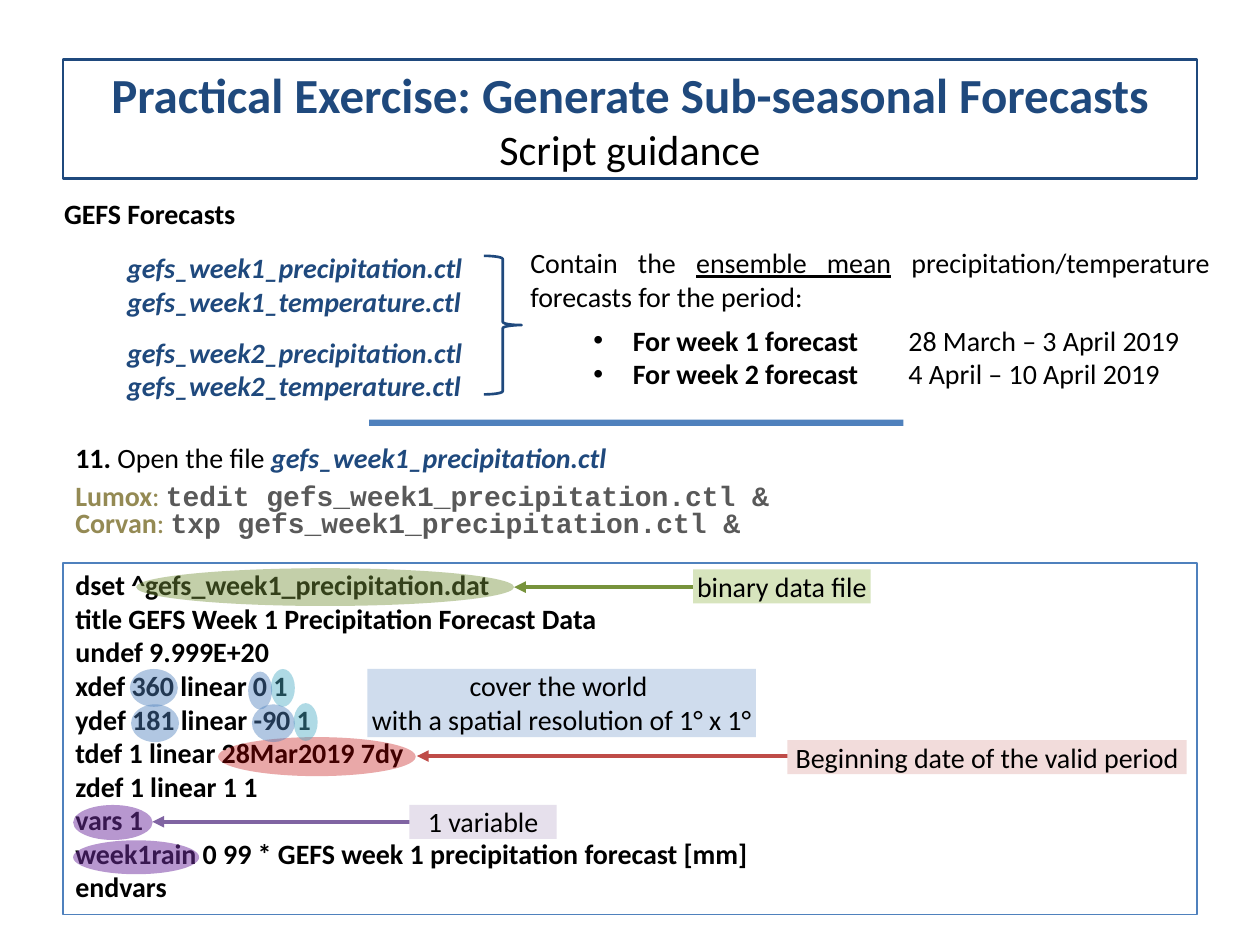
"""Build the slide that walks through a GEFS precipitation control file."""
from dataclasses import dataclass

from lxml import etree
from pptx import Presentation
from pptx import util as u
from pptx.dml.color import RGBColor
from pptx.enum import shapes, text
from pptx.oxml.ns import qn

SHAPE = shapes.MSO_SHAPE
ALIGN = text.PP_ALIGN


@dataclass(frozen=True)
class Theme:
    font: str = "Calibri"
    mono: str = "Courier New"
    title: float = 28
    subtitle: float = 24
    body: float = 16
    black: str = "000000"
    navy: str = "1F497D"
    blue: str = "4F81BD"
    aqua: str = "4BACC6"
    olive: str = "948A54"
    grey: str = "595959"
    green: str = "77933C"
    pale_green: str = "D7E4BD"
    red: str = "C00000"
    brick: str = "BF4C48"
    pale_red: str = "F2DCDB"
    purple: str = "7030A0"
    violet: str = "8064A2"
    pale_violet: str = "E6E0EC"


class SlideBuilder:
    def __init__(self, page, theme):
        self.page = page
        self.theme = theme

    def shape(self, kind, at, fill=None, alpha=None, line=None, width=0.75):
        shape = self.page.shapes.add_shape(kind, *map(u.Pt, at))
        shape.shadow.inherit = False
        if fill:
            shape.fill.solid()
            shape.fill.fore_color.rgb = RGBColor.from_string(fill)
            if alpha:
                color = shape.fill._xPr.find(f"{qn('a:solidFill')}/{qn('a:srgbClr')}")
                etree.SubElement(color, qn("a:alpha"), val=str(alpha * 1000))
        else:
            shape.fill.background()
        if line:
            shape.line.color.rgb = RGBColor.from_string(line)
            shape.line.width = u.Pt(width)
        else:
            shape.line.fill.background()
        return shape

    def ellipse(self, at, fill, alpha):
        self.shape(SHAPE.OVAL, at, fill, alpha)

    def text_box(self, at):
        box = self.page.shapes.add_textbox(*map(u.Pt, at))
        box.text_frame.word_wrap = True
        return box

    def span(self, para, words, size=None, color=None, font=None, **style):
        span = para.add_run()
        span.text = words
        span.font.name = font or self.theme.font
        span.font.size = u.Pt(size or self.theme.body)
        span.font.color.rgb = RGBColor.from_string(color or self.theme.black)
        for name, value in style.items():
            setattr(span.font, name, value)

    def para(self, box, spans, align=ALIGN.LEFT, indent=0, hang=0, bullet=None, **spacing):
        frame = box.text_frame
        para = frame.paragraphs[0]
        if para.runs:
            para = frame.add_paragraph()
        para.alignment = align
        for name, value in spacing.items():
            setattr(para, name, value)
        props = para._p.get_or_add_pPr()
        props.set("marL", str(u.Pt(indent)))
        props.set("indent", str(u.Pt(-hang)))
        if bullet:
            etree.SubElement(props, qn("a:buFont"), typeface="Arial")
            etree.SubElement(props, qn("a:buChar"), char=bullet)
        for words, style in spans:
            self.span(para, words, **style)
        return para

    def label(self, at, lines, fill, alpha=None):
        box = self.shape(SHAPE.RECTANGLE, at, fill, alpha)
        frame = box.text_frame
        frame.margin_left = frame.margin_right = 0
        frame.margin_top = frame.margin_bottom = 0
        frame.vertical_anchor = text.MSO_ANCHOR.TOP
        for words in lines:
            self.para(box, [(words, {})], ALIGN.CENTER)

    def arrow(self, start, end, y, color):
        points = map(u.Pt, (start, y, end, y))
        arrow = self.page.shapes.add_connector(shapes.MSO_CONNECTOR.STRAIGHT, *points)
        arrow.line.color.rgb = RGBColor.from_string(color)
        arrow.line.width = u.Pt(2.25)
        etree.SubElement(arrow.line._get_or_add_ln(), qn("a:tailEnd"), type="triangle")
        etree.SubElement(arrow._element.spPr, qn("a:effectLst"))


def add_heading(slide):
    theme = slide.theme
    box = slide.shape(SHAPE.RECTANGLE, (36, 34, 648, 68), line=theme.navy, width=1.5)
    heading = "Practical Exercise: Generate Sub-seasonal Forecasts"
    style = dict(size=theme.title, color=theme.navy, bold=True)
    para = slide.para(box, [(heading, style)], ALIGN.CENTER)
    para.add_line_break()
    slide.span(para, "Script guidance", size=theme.subtitle)


def add_forecast_files(slide):
    navy = slide.theme.navy
    files = slide.text_box((29.5, 108.7, 264, 129.6))
    slide.para(files, [("GEFS Forecasts", dict(bold=True))], ALIGN.JUSTIFY, space_after=u.Pt(12))
    for week in (1, 2):
        for variable in ("precipitation", "temperature"):
            gap = 9.75 if (week, variable) == (2, "precipitation") else 0
            name = f"gefs_week{week}_{variable}.ctl"
            slide.para(files, [(name, dict(color=navy, bold=True, italic=True))],
                       ALIGN.JUSTIFY, indent=36, space_before=u.Pt(gap))

    periods = slide.text_box((296, 136.8, 402.5, 90.7))
    slide.para(periods, [("Contain the ", {}), ("ensemble mean", dict(underline=True)),
                         (" precipitation/temperature forecasts for the period:", {})],
               ALIGN.JUSTIFY, space_after=u.Pt(6))
    for week, dates in enumerate(("28 March – 3 April 2019", "4 April – 10 April 2019"), 1):
        slide.para(periods, [(f"For week {week} forecast\t", dict(bold=True)), (dates, {})],
                   ALIGN.JUSTIFY, indent=58.5, hang=22.5, bullet="•")
    slide.shape(SHAPE.RIGHT_BRACE, (276.5, 146.2, 21.6, 79.2), line=navy, width=1.5)
    slide.shape(SHAPE.RECTANGLE, (211, 239.8, 305.3, 3.6), slide.theme.blue)


def add_steps(slide):
    theme = slide.theme
    steps = slide.text_box((36, 248.4, 648, 64))
    name = "gefs_week1_precipitation.ctl"
    slide.para(steps, [("11. ", dict(bold=True)), ("Open the file ", {}),
                       (name, dict(color=theme.navy, bold=True, italic=True))],
               space_after=u.Pt(6))
    for system, editor in (("Lumox", "tedit"), ("Corvan", "txp")):
        slide.para(steps, [(system, dict(color=theme.olive, bold=True)),
                           (": ", dict(color=theme.olive)),
                           (f"{editor} {name} &",
                            dict(color=theme.grey, font=theme.mono, bold=True))],
                   line_spacing=0.8)


def add_control_file(slide):
    box = slide.shape(SHAPE.RECTANGLE, (36, 321.8, 648, 201), line=slide.theme.blue)
    box.text_frame.vertical_anchor = text.MSO_ANCHOR.TOP
    box.text_frame.margin_top = u.Pt(2.6)
    for line in ("dset ^gefs_week1_precipitation.dat",
                 "title GEFS Week 1 Precipitation Forecast Data",
                 "undef 9.999E+20", "xdef 360 linear 0 1", "ydef 181 linear -90 1",
                 "tdef 1 linear 28Mar2019 7dy", "zdef 1 linear 1 1", "vars 1",
                 "week1rain 0 99 * GEFS week 1 precipitation forecast [mm]", "endvars"):
        slide.para(box, [(line, dict(bold=True))])


def add_notes_on_file(slide):
    theme = slide.theme
    slide.ellipse((41.8, 460, 45.4, 20), theme.purple, 50)
    slide.arrow(234, 87.1, 469.6, theme.violet)
    slide.label((234, 460, 84.2, 19.4), ["1 variable"], theme.pale_violet)
    slide.ellipse((41.8, 480.2, 72, 19.4), theme.purple, 50)

    slide.ellipse((124.6, 421.2, 113, 22.3), theme.red, 34)
    slide.arrow(450, 238.3, 432, theme.brick)
    slide.label((450, 423, 228.2, 19.4), ["Beginning date of the valid period"], theme.pale_red)

    for left, top in ((154.8, 382.3), (167.8, 401.8)):
        slide.ellipse((left, top, 13.7, 21.6), theme.aqua, 44)
    slide.label((210, 382.3, 222, 38.9),
                ["cover the world ", "with a spatial resolution of 1° x 1°"], theme.blue, 27)
    for left, top, width in ((74.2, 382.3, 27.4), (74.9, 402.5, 27.4),
                             (141.8, 383.8, 13.7), (144, 402.5, 24.5)):
        slide.ellipse((left, top, width, 21.6), theme.blue, 44)

    slide.ellipse((77.8, 324.7, 216, 21.6), theme.green, 44)
    slide.label((396, 325.4, 101.5, 19.4), ["binary data file"], theme.pale_green)
    slide.arrow(396, 293.8, 335.5, theme.green)


def main():
    deck = Presentation()
    deck.slide_width, deck.slide_height = u.Pt(720), u.Pt(540)
    slide = SlideBuilder(deck.slides.add_slide(deck.slide_layouts[6]), Theme())
    add_heading(slide)
    add_forecast_files(slide)
    add_control_file(slide)
    add_steps(slide)
    add_notes_on_file(slide)
    deck.save("out.pptx")


if __name__ == "__main__":
    main()
